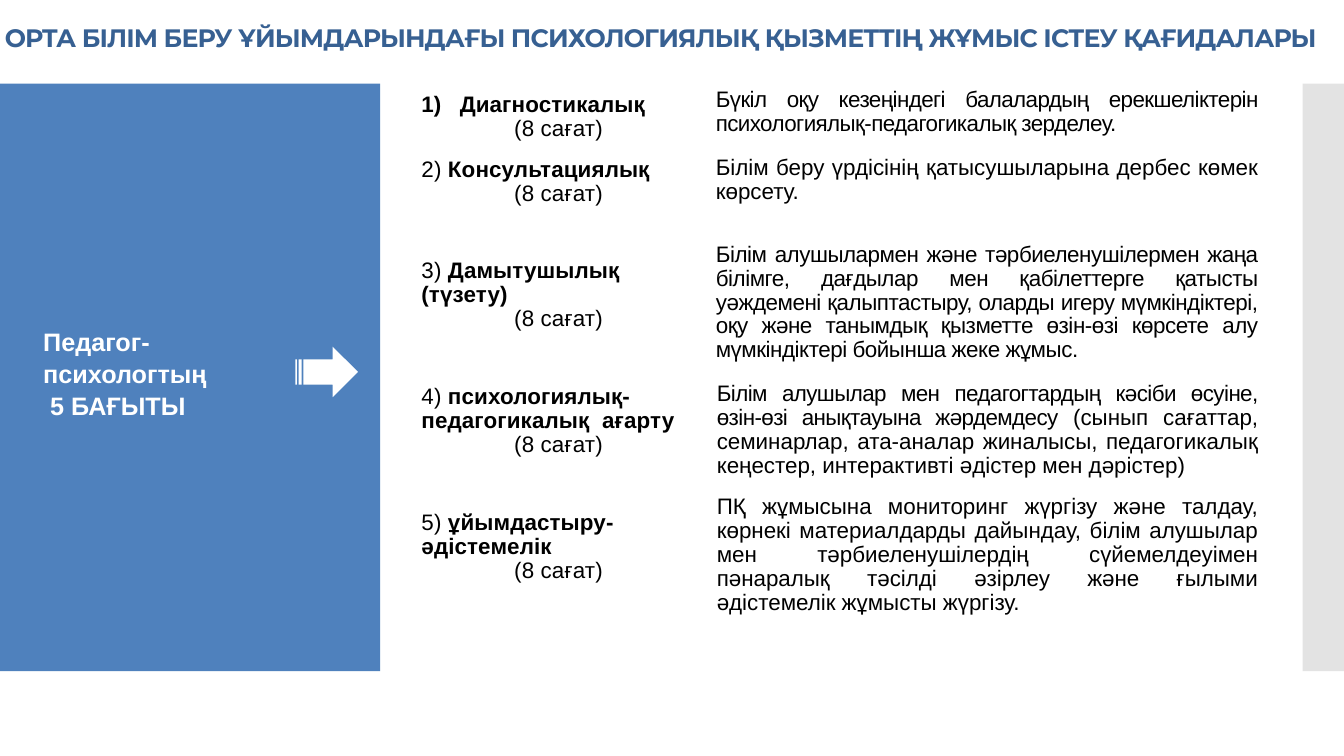
"""Build a slide on the five working areas of a school psychologist."""
from dataclasses import dataclass

from lxml import etree
from pptx import Presentation
from pptx import util as u
from pptx.dml.color import RGBColor
from pptx.enum import shapes, text
from pptx.oxml.ns import qn

TITLE = "ОРТА БІЛІМ БЕРУ ҰЙЫМДАРЫНДАҒЫ ПСИХОЛОГИЯЛЫҚ ҚЫЗМЕТТІҢ ЖҰМЫС ІСТЕУ ҚАҒИДАЛАРЫ "
LABEL = ["Педагог-психологтың", " 5 БАҒЫТЫ"]
HOURS = "(8 сағат)"
AREAS = [
    {"height": 67, "number": "", "names": ["Диагностикалық"], "duty": [
        ("Бүкіл оқу кезеңіндегі балалардың ерекшеліктерін "
         "психологиялық-педагогикалық зерделеу. ", -0.4)]},
    {"height": 85, "number": "2) ", "names": ["Консультациялық"], "duty": [
        ("Білім беру үрдісінің қатысушыларына дербес көмек көрсету.", 0)]},
    {"height": 133, "number": "3) ", "names": ["Дамытушылық", "(түзету)"], "duty": [
        ("Білім алушылармен және тәрбиеленушілермен жаңа білімге, дағдылар мен "
         "қабілеттерге қатысты уәждемені қалыптастыру, оларды игеру мүмкіндіктері, "
         "оқу және танымдық қызметте өзін-өзі көрсете алу мүмкіндіктері бойынша "
         "жеке жұмыс.", -0.3)]},
    {"height": 109, "number": "4) ", "names": ["психологиялық-педагогикалық  ағарту"], "duty": [
        ("Білім алушылар мен педагогтардың кәсіби өсуіне, өзін-өзі анықтауына "
         "жәрдемдесу ", -0.4),
        ("(сынып сағаттар, семинарлар, ата-аналар жиналысы, педагогикалық кеңестер, "
         "интерактивті әдістер мен дәрістер)", 0)]},
    {"height": 133, "number": "5) ", "names": ["ұйымдастыру-әдістемелік"], "duty": [
        ("ПҚ жұмысына мониторинг жүргізу және талдау, көрнекі материалдарды дайындау, "
         "білім алушылар мен тәрбиеленушілердің сүйемелдеуімен пәнаралық тәсілді "
         "әзірлеу және ғылыми әдістемелік жұмысты жүргізу.", 0)]},
]

SLIDE = (1333, 750)
TITLE_BOX = (0, 21, 1317, 32)
BLUE_PANEL = (0, 83, 377, 583)
GREY_PANEL = (1292, 83, 42, 583)
LABEL_BOX = (33, 311, 275, 117)
ARROW = (293, 344, 62, 50)
TABLE_AT = (408, 83)
COLUMNS = (292, 558)
NUMBER_INDENT = 38
DUTY_INDENT = 1
LOW_MARGIN = 30


@dataclass(frozen=True)
class Theme:
    blue: str = "4F81BD"
    heading: str = "376092"
    grey: str = "C8C8C8"
    white: str = "FFFFFF"
    black: str = "000000"
    body_font: str = "Arial"
    title_font: str = "Montserrat"
    large: int = 18
    body: int = 16
    table_spacing: float = 0.96
    label_spacing: float = 1.06


THEME = Theme()


def px(length):
    return u.Emu(length * 9144)


def paint(target, color):
    target.fill.solid()
    target.fill.fore_color.rgb = RGBColor.from_string(color)


def style(span, size, color, font=THEME.body_font, bold=False, spacing=0):
    span.font.size = u.Pt(size)
    span.font.name = font
    span.font.bold = bold
    span.font.color.rgb = RGBColor.from_string(color)
    if spacing:
        span._r.get_or_add_rPr().set("spc", str(round(spacing * 100)))


def add_box(slide, kind, frame, color):
    box = slide.shapes.add_shape(kind, *map(px, frame))
    box.shadow.inherit = False
    box.line.fill.background()
    paint(box, color)
    return box


def write_paragraphs(frame, lines, align, spacing):
    """Fill a frame from lists of (text, bold, letter spacing) spans."""
    for index, spans in enumerate(lines):
        para = frame.paragraphs[0] if index == 0 else frame.add_paragraph()
        para.alignment = align
        para.line_spacing = spacing
        for words, bold, tracking in spans:
            span = para.add_run()
            span.text = words
            style(span, THEME.body, THEME.black, bold=bold, spacing=tracking)


def add_title(slide):
    title = slide.shapes.title
    title.left, title.top, title.width, title.height = map(px, TITLE_BOX)
    frame = title.text_frame
    frame.text = TITLE
    frame.word_wrap = True
    frame.auto_size = text.MSO_AUTO_SIZE.SHAPE_TO_FIT_TEXT
    frame.vertical_anchor = text.MSO_ANCHOR.MIDDLE
    frame.margin_left = frame.margin_right = frame.margin_bottom = 0
    frame.margin_top = px(1)
    para = frame.paragraphs[0]
    para.alignment = text.PP_ALIGN.CENTER
    para.space_before = u.Pt(1)
    style(para.runs[0], THEME.large, THEME.heading, THEME.title_font, True, -0.6)


def add_label(slide):
    box = add_box(slide, shapes.MSO_SHAPE.RECTANGLE, LABEL_BOX, THEME.blue)
    frame = box.text_frame
    frame.text = "\n".join(LABEL)
    frame.vertical_anchor = text.MSO_ANCHOR.MIDDLE
    for para in frame.paragraphs:
        para.alignment = text.PP_ALIGN.LEFT
        para.line_spacing = THEME.label_spacing
        style(para.runs[0], THEME.large, THEME.white, bold=True)


def add_table(slide):
    size = (sum(COLUMNS), sum(area["height"] for area in AREAS))
    table = slide.shapes.add_table(
        len(AREAS), len(COLUMNS), *map(px, TABLE_AT + size)).table
    table.first_row = table.horz_banding = False
    for column, width in zip(table.columns, COLUMNS):
        column.width = px(width)
    for row, area in zip(table.rows, AREAS):
        row.height = px(area["height"])
        name_cell, duty_cell = row.cells
        for cell in row.cells:
            paint(cell, THEME.white)
        names = [[(name, True, 0.1)] for name in area["names"]]
        if area["number"]:
            names[0].insert(0, (area["number"], False, 0.1))
            name_cell.margin_bottom = px(LOW_MARGIN)
        name_cell.vertical_anchor = text.MSO_ANCHOR.MIDDLE
        write_paragraphs(name_cell.text_frame, names + [[(HOURS, False, 0.1)]],
                         text.PP_ALIGN.LEFT, THEME.table_spacing)
        name_cell.text_frame.paragraphs[-1].alignment = text.PP_ALIGN.CENTER
        if not area["number"]:
            props = name_cell.text_frame.paragraphs[0]._p.get_or_add_pPr()
            props.set("marL", str(px(NUMBER_INDENT)))
            props.set("indent", str(-px(NUMBER_INDENT)))
            etree.SubElement(props, qn("a:buFont"), typeface=THEME.body_font)
            etree.SubElement(props, qn("a:buAutoNum"), type="arabicParenR")
        duty = [(words, False, tracking) for words, tracking in area["duty"]]
        write_paragraphs(duty_cell.text_frame, [duty],
                         text.PP_ALIGN.JUSTIFY, THEME.table_spacing)
        if area in AREAS[3:]:
            props = duty_cell.text_frame.paragraphs[0]._p.get_or_add_pPr()
            props.set("marL", str(px(DUTY_INDENT)))


def main():
    deck = Presentation()
    deck.slide_width, deck.slide_height = map(px, SLIDE)
    slide = deck.slides.add_slide(deck.slide_layouts[5])
    add_box(slide, shapes.MSO_SHAPE.RECTANGLE, BLUE_PANEL, THEME.blue)
    grey = add_box(slide, shapes.MSO_SHAPE.RECTANGLE, GREY_PANEL, THEME.grey)
    color = grey.fill._xPr.find(qn("a:solidFill"))[0]
    etree.SubElement(color, qn("a:alpha"), val="50000")
    add_table(slide)
    add_label(slide)
    add_box(slide, shapes.MSO_SHAPE.STRIPED_RIGHT_ARROW, ARROW, THEME.white)
    add_title(slide)
    deck.save("out.pptx")


if __name__ == "__main__":
    main()
